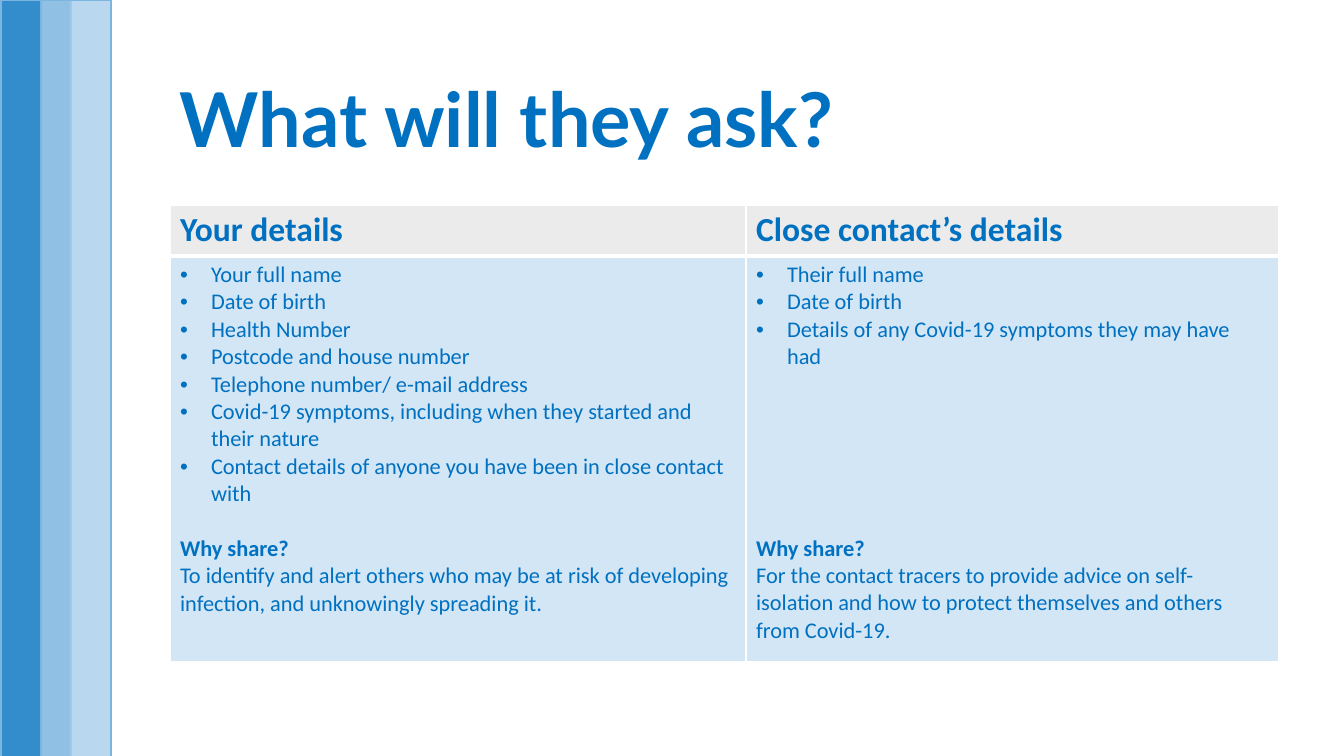
from typing import NamedTuple

from lxml import etree
from pptx import Presentation, util as u
from pptx.dml.color import RGBColor
from pptx.enum import shapes
from pptx.oxml import ns

EMU_PER_PX = 12192000 / 1344
BULLET_INDENT = 31
LINE_POINTS = 19.53  # one line of 16 pt Calibri
COLOURS = {
    "blue": "0070C0",
    "pale_blue": "A8CEEA",
    "outline": "7CB5E0",
    "header": "EBEBEB",
    "body": "D3E6F5",
    "white": "FFFFFF",
}


class Bar(NamedTuple):
    left: int
    colour: str


class Column(NamedTuple):
    width: int
    heading: str
    bullets: list[str]
    gap_lines: int
    reason: str


BARS = [Bar(1, "blue"), Bar(41, "pale_blue")]
COLUMNS = [
    Column(
        576,
        "Your details",
        [
            "Your full name",
            "Date of birth",
            "Health Number",
            "Postcode and house number",
            "Telephone number/ e-mail address",
            "Covid-19 symptoms, including when they started and their nature",
            "Contact details of anyone you have been in close contact with",
        ],
        1,
        "To identify and alert others who may be at risk of developing infection, "
        "and unknowingly spreading it.",
    ),
    Column(
        533,
        "Close contact’s details",
        ["Their full name", "Date of birth", "Details of any Covid-19 symptoms they may have had"],
        6,
        "For the contact tracers to provide advice on self-isolation and how to protect "
        "themselves and others from Covid-19.",
    ),
]
ROW_HEIGHTS = [51, 405]


def px(length: int) -> int:
    return round(length * EMU_PER_PX)


def rgb(name: str) -> RGBColor:
    return RGBColor.from_string(COLOURS[name])


def add_text(frame, words: str, *, size: int = 16, font: str = "Calibri", bold: bool = False,
             bullet: bool = False, gap_lines: int = 0) -> None:
    """Fill the empty first paragraph, or append a new one."""
    paragraph = frame.paragraphs[0] if not frame.text else frame.add_paragraph()
    run = paragraph.add_run()
    run.text = words
    run.font.size, run.font.name, run.font.bold = u.Pt(size), font, bold
    run.font.color.rgb = rgb("blue")
    if gap_lines:
        paragraph.space_before = u.Pt(gap_lines * LINE_POINTS)
    if bullet:
        properties = paragraph._p.get_or_add_pPr()
        properties.set("marL", str(px(BULLET_INDENT)))
        properties.set("indent", str(-px(BULLET_INDENT)))
        etree.SubElement(properties, ns.qn("a:buFont"), typeface="Arial")
        etree.SubElement(properties, ns.qn("a:buChar"), char="•")


def add_bar(slide, bar: Bar) -> None:
    shape = slide.shapes.add_shape(
        shapes.MSO_SHAPE.RECTANGLE, px(bar.left), 0, px(70), px(763))
    shape.shadow.inherit = False
    shape.fill.solid()
    shape.fill.fore_color.rgb = rgb(bar.colour)
    colour = shape.fill._xPr.find(".//" + ns.qn("a:srgbClr"))
    etree.SubElement(colour, ns.qn("a:alpha"), val="80000")
    shape.line.color.rgb = rgb("outline")
    shape.line.width = u.Pt(1.5)


def style_cell(cell, fill: str, top: int, bottom: int) -> None:
    """Set the fill and the white borders, with widths in points."""
    cell.fill.solid()
    cell.fill.fore_color.rgb = rgb(fill)
    properties = cell._tc.get_or_add_tcPr()
    sides = {"lnL": 1, "lnR": 1, "lnT": top, "lnB": bottom}
    for position, (side, width) in enumerate(sides.items()):
        line = etree.Element(ns.qn(f"a:{side}"), w=str(u.Pt(width)))
        solid = etree.SubElement(line, ns.qn("a:solidFill"))
        etree.SubElement(solid, ns.qn("a:srgbClr"), val=COLOURS["white"])
        properties.insert(position, line)


def add_details_table(slide) -> None:
    table = slide.shapes.add_table(
        len(ROW_HEIGHTS), len(COLUMNS), px(170), px(205),
        px(sum(column.width for column in COLUMNS)), px(sum(ROW_HEIGHTS))).table
    table.horz_banding = False
    for row, height in zip(table.rows, ROW_HEIGHTS):
        row.height = px(height)
    for index, column in enumerate(COLUMNS):
        table.columns[index].width = px(column.width)
        header, body = table.cell(0, index), table.cell(1, index)
        style_cell(header, "header", top=1, bottom=3)
        style_cell(body, "body", top=3, bottom=1)
        add_text(header.text_frame, column.heading, size=24, bold=True)
        for item in column.bullets:
            add_text(body.text_frame, item, bullet=True)
        add_text(body.text_frame, "Why share?", bold=True, gap_lines=column.gap_lines)
        add_text(body.text_frame, column.reason)


def main() -> None:
    presentation = Presentation()
    presentation.slide_width, presentation.slide_height = px(1344), px(756)
    slide = presentation.slides.add_slide(presentation.slide_layouts[6])

    # Side bars
    for bar in BARS:
        add_bar(slide, bar)

    # Table of details
    add_details_table(slide)

    # Title
    title = slide.shapes.add_textbox(px(170), px(67), px(710), px(102))
    title.text_frame.word_wrap = True
    add_text(title.text_frame, "What will they ask?", size=54, font="Lato", bold=True)

    presentation.save("out.pptx")


if __name__ == "__main__":
    main()
